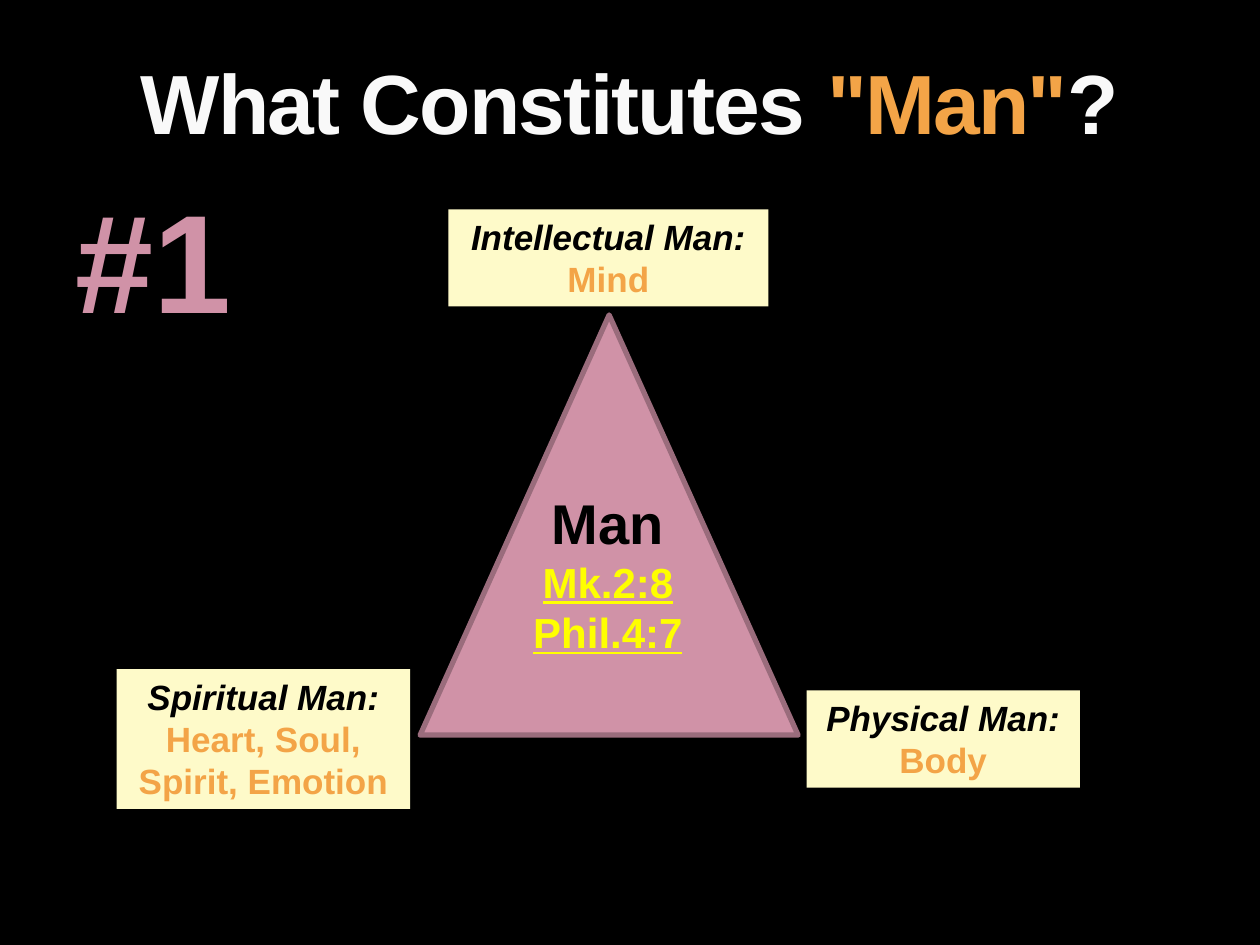
from lxml import etree
from pptx import Presentation
from pptx.dml.color import RGBColor
from pptx.enum.shapes import MSO_SHAPE
from pptx.enum.text import MSO_ANCHOR, MSO_AUTO_SIZE, PP_ALIGN
from pptx.oxml.ns import qn
from pptx.util import Cm, Pt

TRIANGLE, RECTANGLE = MSO_SHAPE.ISOSCELES_TRIANGLE, MSO_SHAPE.RECTANGLE
TOP, MIDDLE, BOTTOM = MSO_ANCHOR.TOP, MSO_ANCHOR.MIDDLE, MSO_ANCHOR.BOTTOM
CENTER, LEFT = PP_ALIGN.CENTER, PP_ALIGN.LEFT
NO_FIT = MSO_AUTO_SIZE.NONE
COLORS = {
    "black": "000000", "white": "F9F9F9", "orange": "F3A447", "rose": "D092A7",
    "edge": "9A6C7C", "cream": "FEFAC9", "yellow": "FFFF00",
}


def color(name):
    return RGBColor.from_string(COLORS[name])


def place(shape, box):
    for name, value in zip(("left", "top", "width", "height"), box):
        setattr(shape, name, Cm(value))


def add_span(para, text, size, color_name, **formats):
    span = para.add_run()
    span.text = text
    values = {"name": "Arial", "size": Pt(size), "bold": True, **formats}
    for name, value in values.items():
        setattr(span.font, name, value)
    span.font.color.rgb = color(color_name)
    return span


def prepare(frame, anchor):
    values = {"word_wrap": True, "auto_size": NO_FIT, "vertical_anchor": anchor}
    for name, value in values.items():
        setattr(frame, name, value)


def write_lines(frame, lines, anchor=TOP):
    prepare(frame, anchor)
    for index, (text, size, color_name, formats) in enumerate(lines):
        para = frame.add_paragraph() if index else frame.paragraphs[0]
        para.alignment = CENTER
        add_span(para, text, size, color_name, **formats)


def fill_title(page, box):
    title = page.shapes.title
    place(title, box)
    prepare(title.text_frame, BOTTOM)
    para = title.text_frame.paragraphs[0]
    para.alignment = CENTER
    parts = [("What Constitutes ", "white"), ('"Man"', "orange"), ("?", "white")]
    for text, color_name in parts:
        span = add_span(para, text, 48, color_name)
        span.font._element.set("spc", "-100")


def fill_number(page, box):
    body = page.placeholders[1]
    place(body, box)
    prepare(body.text_frame, TOP)
    para = body.text_frame.paragraphs[0]
    para.alignment, para.space_before = LEFT, Pt(6)
    properties = para._p.get_or_add_pPr()
    properties.set("marL", "0")
    properties.set("indent", "0")
    etree.SubElement(properties, qn("a:buNone"))
    add_span(para, "#1", 80, "rose")


def add_plain_shape(page, kind, box, fill):
    shape = page.shapes.add_shape(kind, *map(Cm, box))
    shape.shadow.inherit = False
    shape.fill.solid()
    shape.fill.fore_color.rgb = color(fill)
    shape.line.fill.background()
    return shape


def add_man_triangle(page, box):
    left, top, width, height = box
    triangle = add_plain_shape(page, TRIANGLE, box, "rose")
    triangle.line.color.rgb = color("edge")
    triangle.line.width = Pt(3)
    label_box = (left + 1.88, top + 3.38, width / 2, 3.68)
    label = page.shapes.add_textbox(*map(Cm, label_box))
    verses = [(verse, 24, "yellow", {"underline": True})
              for verse in ("Mk.2:8", "Phil.4:7")]
    write_lines(label.text_frame, [("Man", 32, "black", {}), *verses])


def add_aspect(page, box, heading, detail, anchor=TOP):
    card = add_plain_shape(page, RECTANGLE, box, "cream")
    lines = [(heading, 20, "black", {"italic": True}),
             (detail, 20, "orange", {"italic": False})]
    write_lines(card.text_frame, lines, anchor)


def main():
    deck = Presentation()
    deck.slide_width, deck.slide_height = Cm(25.4), Cm(19.05)
    page = deck.slides.add_slide(deck.slide_layouts[1])
    page.background.fill.solid()
    page.background.fill.fore_color.rgb = color("black")

    fill_number(page, (1.27, 3.38, 22.86, 13.54))
    fill_title(page, (1.27, 0.43, 22.86, 2.74))
    add_man_triangle(page, (8.47, 6.35, 7.62, 8.47))
    add_aspect(page, (9.04, 4.22, 6.45, 1.96), "Intellectual Man:", "Mind", MIDDLE)
    add_aspect(page, (2.35, 13.49, 5.92, 2.82), "Spiritual Man:",
               "Heart, Soul, Spirit, Emotion")
    add_aspect(page, (16.26, 13.92, 5.51, 1.96), "Physical Man:", "Body")
    deck.save("out.pptx")


if __name__ == "__main__":
    main()
